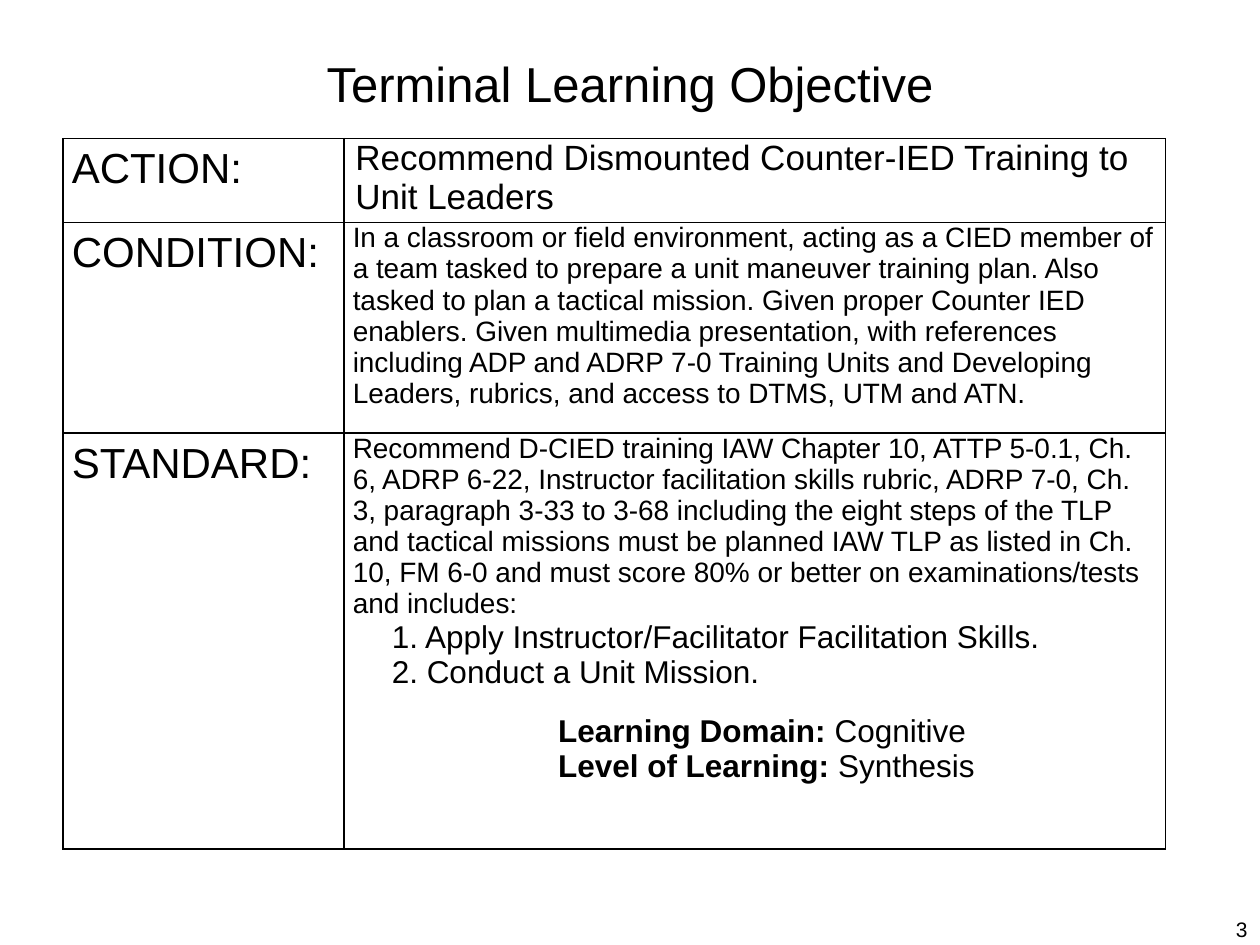
from lxml import etree
from pptx import Presentation
from pptx.dml.color import RGBColor
from pptx.enum.text import MSO_ANCHOR, PP_ALIGN
from pptx.oxml.ns import qn
from pptx.util import Inches, Pt

MIDDLE = MSO_ANCHOR.MIDDLE
CENTER, RIGHT = PP_ALIGN.CENTER, PP_ALIGN.RIGHT
COLORS = {"ink": "000000", "paper": "FFFFFF"}
FONT = "Arial"
COLUMNS = [2.23, 6.52]
ROWS = [0.64, 1.67, 3.3]

presentation = Presentation()
presentation.slide_width, presentation.slide_height = Inches(10), Inches(7.5)
slide = presentation.slides.add_slide(presentation.slide_layouts[6])
slide.background.fill.solid()
slide.background.fill.fore_color.rgb = RGBColor.from_string(COLORS["paper"])


def write(paragraph, text, size):
    for index, part in enumerate(text.split("**")):
        if part:
            run = paragraph.add_run()
            run.text = part
            if index % 2:
                run.font.bold = True
    paragraph.font.name = FONT
    paragraph.font.size = Pt(size)
    paragraph.font.color.rgb = RGBColor.from_string(COLORS["ink"])


def add_borders(cell):
    properties = cell._tc.get_or_add_tcPr()
    for index, side in enumerate(("lnL", "lnR", "lnT", "lnB")):
        line = etree.Element(qn(f"a:{side}"), w=str(Pt(1)))
        fill = etree.SubElement(line, qn("a:solidFill"))
        etree.SubElement(fill, qn("a:srgbClr"), val=COLORS["ink"])
        properties.insert(index, line)


for text, size, alignment, box in [
    ("Terminal Learning Objective", 28, CENTER, (0.5, 0.3, 9, 0.72)),
    ("3", 12, RIGHT, (7.67, 7.25, 2.33, 0.25)),
]:
    frame = slide.shapes.add_textbox(*map(Inches, box)).text_frame
    frame.word_wrap = True
    frame.vertical_anchor = MIDDLE
    frame.paragraphs[0].alignment = alignment
    write(frame.paragraphs[0], text, size)

objectives = [
    ("ACTION:", [
        ("Recommend Dismounted Counter-IED Training to Unit Leaders", 20, 0.02, 0),
    ]),
    ("CONDITION:", [
        ("In a classroom or field environment, acting as a CIED member of a team tasked "
         "to prepare a unit maneuver training plan. Also tasked to plan a tactical mission. "
         "Given proper Counter IED enablers. Given multimedia presentation, with references "
         "including ADP and ADRP 7-0 Training Units and Developing Leaders, rubrics, and "
         "access to DTMS, UTM and ATN.", 16, 0, 0),
    ]),
    ("STANDARD:", [
        ("Recommend D-CIED training IAW Chapter 10, ATTP 5-0.1, Ch. 6, ADRP 6-22, "
         "Instructor facilitation skills rubric, ADRP 7-0, Ch. 3, paragraph 3-33 to 3-68 "
         "including the eight steps of the TLP and tactical missions must be planned IAW "
         "TLP as listed in Ch. 10, FM 6-0 and must score 80% or better on "
         "examinations/tests and includes:", 16, 0, 0),
        ("1. Apply Instructor/Facilitator Facilitation Skills.", 18, 0.31, 0),
        ("2. Conduct a Unit Mission.", 18, 0.31, 0),
        ("**Learning Domain: **Cognitive", 18, 1.63, 13.5),
        ("**Level of Learning: **Synthesis", 18, 1.63, 0),
    ]),
]

table = slide.shapes.add_table(
    len(ROWS), len(COLUMNS), Inches(0.5), Inches(1.1),
    Inches(sum(COLUMNS)), Inches(sum(ROWS)),
).table
table.first_row = table.horz_banding = False
for column, width in zip(table.columns, COLUMNS):
    column.width = Inches(width)
for row, height, (label, details) in zip(table.rows, ROWS, objectives):
    row.height = Inches(height)
    for cell in row.cells:
        cell.margin_left = cell.margin_right = Inches(0.07)
        cell.margin_top = cell.margin_bottom = 0
        cell.fill.background()
        add_borders(cell)
    label_cell, detail_cell = row.cells
    label_paragraph = label_cell.text_frame.paragraphs[0]
    label_paragraph.line_spacing = 1.15
    write(label_paragraph, label, 24)
    frame = detail_cell.text_frame
    for index, (text, size, indent, space) in enumerate(details):
        paragraph = frame.add_paragraph() if index else frame.paragraphs[0]
        if indent:
            paragraph._p.get_or_add_pPr().set("marL", str(Inches(indent)))
        if space:
            paragraph.space_before = Pt(space)
        write(paragraph, text, size)

presentation.save("out.pptx")
